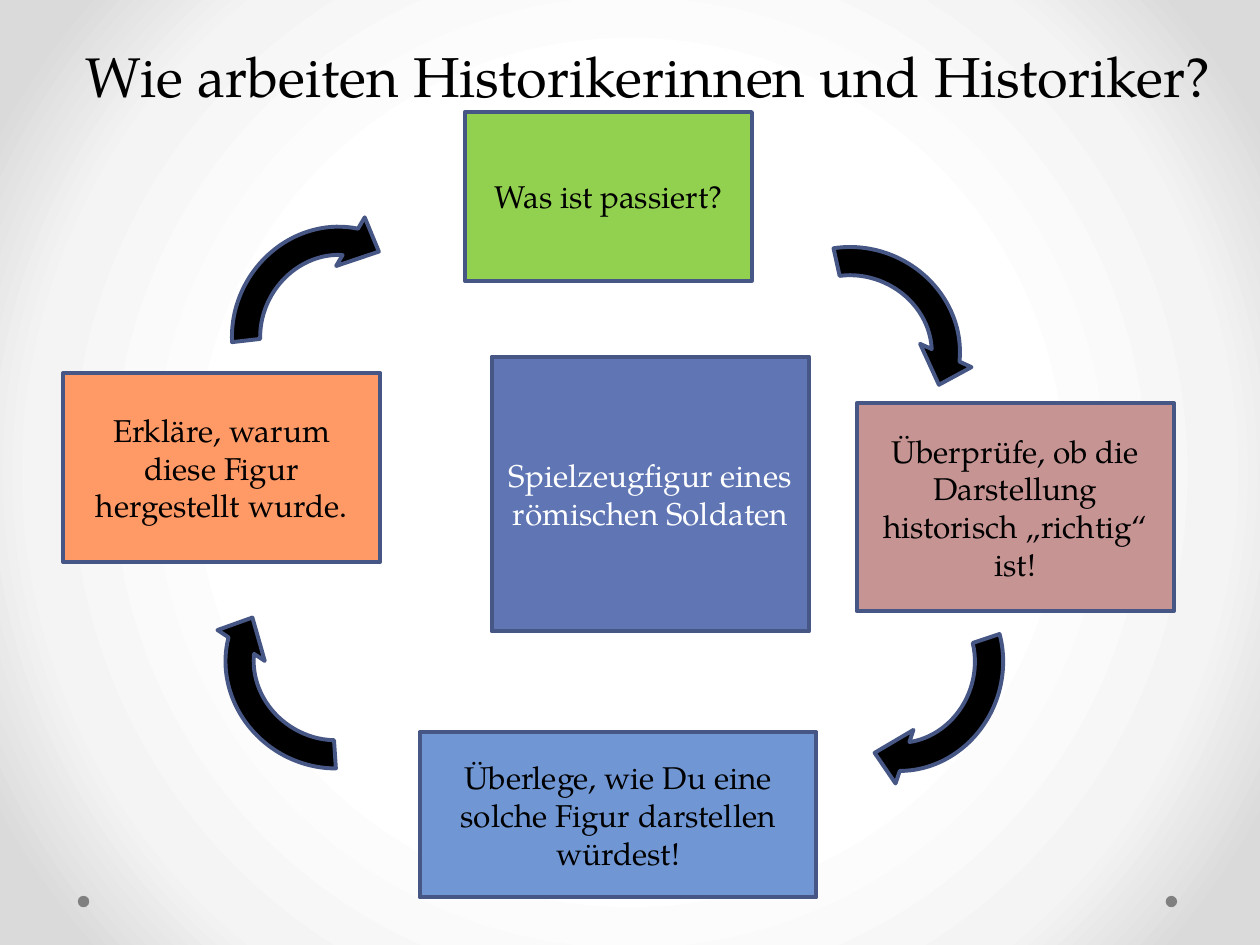
from lxml import etree
from pptx import Presentation
from pptx.dml.color import RGBColor
from pptx.enum.shapes import MSO_SHAPE
from pptx.enum.text import MSO_ANCHOR, MSO_AUTO_SIZE, PP_ALIGN
from pptx.oxml import parse_xml
from pptx.oxml.ns import nsdecls, qn
from pptx.util import Cm, Pt

FONT = "TeX Gyre Pagella"
BLACK = RGBColor(0x00, 0x00, 0x00)
WHITE = RGBColor(0xFF, 0xFF, 0xFF)
GREY = RGBColor(0x80, 0x80, 0x80)
OUTLINE = RGBColor(0x47, 0x57, 0x85)
GREEN = RGBColor(0x92, 0xD0, 0x50)
ROSE = RGBColor(0xC7, 0x94, 0x94)
SKY = RGBColor(0x70, 0x97, 0xD3)
ORANGE = RGBColor(0xFF, 0x99, 0x66)
INDIGO = RGBColor(0x60, 0x76, 0xB4)
BACKGROUND_STOPS = [
    (50, WHITE),
    (76, RGBColor(0xF4, 0xF4, 0xF4)),
    (92, RGBColor(0xDA, 0xDA, 0xDA)),
]


def add_filled(preset, left, top, width, height, color, outlined=True):
    shape = slide.shapes.add_shape(preset, Cm(left), Cm(top), Cm(width), Cm(height))
    shape.shadow.inherit = False
    shape.fill.solid()
    shape.fill.fore_color.rgb = color
    if outlined:
        shape.line.color.rgb = OUTLINE
        shape.line.width = Pt(2.25)
    else:
        shape.line.fill.background()
    return shape


def write_centred(frame, text, size, color):
    frame.word_wrap = True
    frame.text = text
    paragraph = frame.paragraphs[0]
    paragraph.alignment = PP_ALIGN.CENTER
    paragraph.font.name = FONT
    paragraph.font.size = Pt(size)
    paragraph.font.color.rgb = color


presentation = Presentation()
presentation.slide_width = Cm(25.4)
presentation.slide_height = Cm(19.05)
slide = presentation.slides.add_slide(presentation.slide_layouts[5])

# Radial background, white in the centre
slide.background.fill.gradient()
gradient = slide.element.find(".//" + qn("a:gradFill"))
for child in list(gradient):
    gradient.remove(child)
stops = etree.SubElement(gradient, qn("a:gsLst"))
for position, color in BACKGROUND_STOPS:
    stop = etree.SubElement(stops, qn("a:gs"), pos=str(position * 1000))
    etree.SubElement(stop, qn("a:srgbClr"), val=str(color))
gradient.append(parse_xml(
    f'<a:path {nsdecls("a")} path="circle">'
    '<a:fillToRect l="50000" t="50000" r="50000" b="50000"/></a:path>'
))

# Title
title = slide.shapes.title
title.left, title.top, title.width, title.height = Cm(1.27), Cm(0.76), Cm(23.62), Cm(1.55)
write_centred(title.text_frame, "Wie arbeiten Historikerinnen und Historiker?", 32, BLACK)
title.text_frame.auto_size = MSO_AUTO_SIZE.NONE
title.text_frame.vertical_anchor = MSO_ANCHOR.BOTTOM
title.text_frame.paragraphs[0].line_spacing = Pt(58)

# Corner dots
for left in (1.57, 23.5):
    add_filled(MSO_SHAPE.OVAL, left, 18.06, 0.23, 0.23, GREY, outlined=False)

# Arrows of the cycle, clockwise from the upper right
for left, top, rotation in [
    (14.83, 4.72, 24.4),
    (15.8, 11.15, 108.5),
    (4.22, 11.18, 213.1),
    (4.29, 4.39, 300.4),
]:
    arrow = add_filled(MSO_SHAPE.CIRCULAR_ARROW, left, top, 4.83, 4.55, BLACK)
    arrow.rotation = rotation
    for index, value in enumerate((0.125, 11.42, 204.58, 139.85, 0.125)):
        arrow.adjustments[index] = value

# Steps clockwise from the top, then the subject in the middle
for text, left, top, width, height, color, text_color in [
    ("Was ist passiert?", 9.37, 2.26, 5.79, 3.4, GREEN, BLACK),
    ("Überprüfe, ob die Darstellung historisch „richtig“ ist!",
     17.27, 8.13, 6.4, 4.19, ROSE, BLACK),
    ("Überlege, wie Du eine solche Figur darstellen würdest!",
     8.46, 14.76, 8, 3.33, SKY, BLACK),
    ("Erkläre, warum diese Figur hergestellt wurde.",
     1.27, 7.52, 6.4, 3.81, ORANGE, BLACK),
    ("Spielzeugfigur eines römischen Soldaten",
     9.91, 7.19, 6.4, 5.54, INDIGO, WHITE),
]:
    box = add_filled(MSO_SHAPE.RECTANGLE, left, top, width, height, color)
    box.text_frame.vertical_anchor = MSO_ANCHOR.MIDDLE
    write_centred(box.text_frame, text, 18, text_color)

presentation.save("out.pptx")
